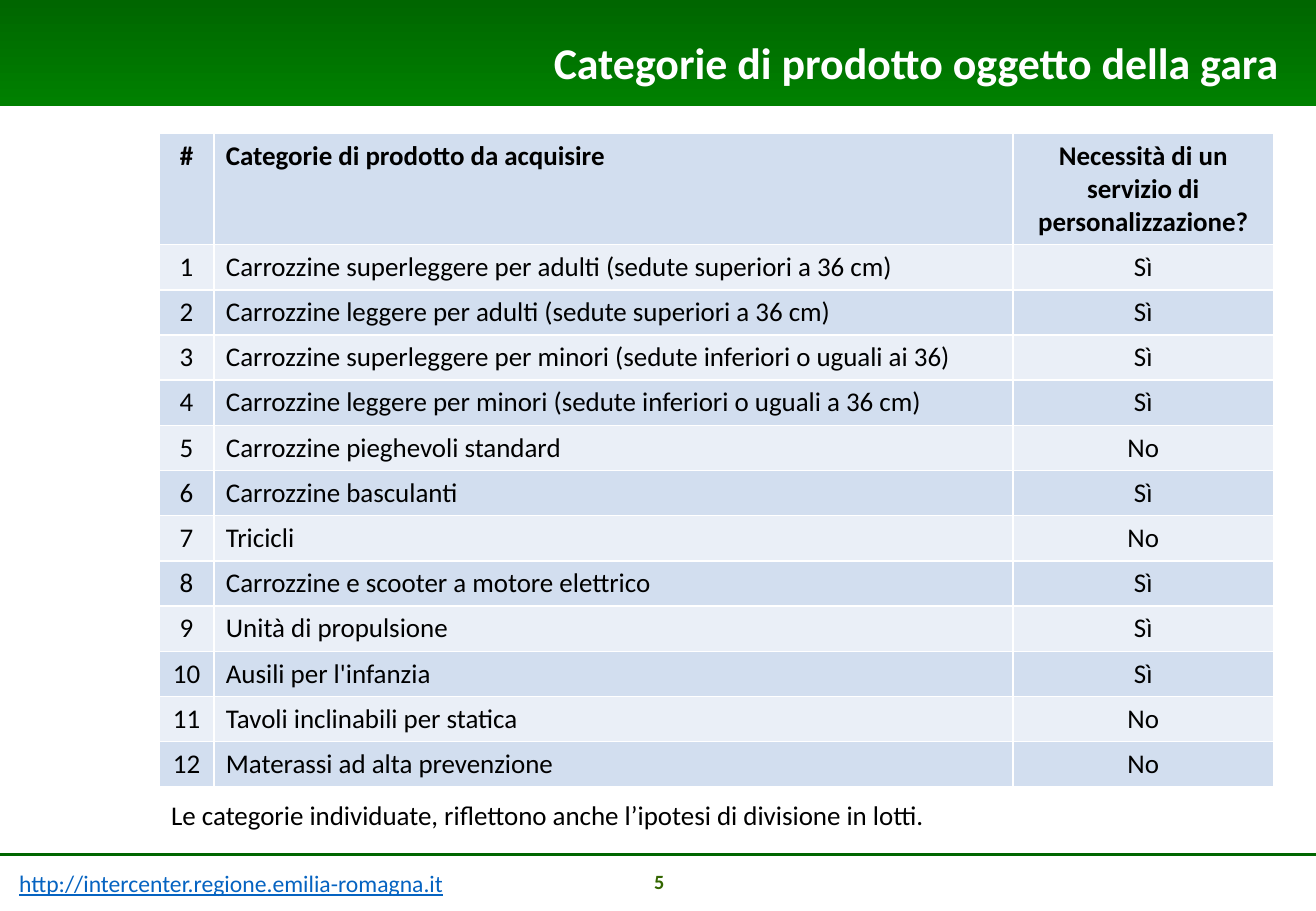
"""Build the slide that lists the product categories of the tender."""
import dataclasses
import typing

import pptx
import pptx.dml.color
import pptx.enum.shapes
import pptx.enum.text
import pptx.oxml.ns
import pptx.util
from lxml import etree

Cm = pptx.util.Cm
Align = pptx.enum.text.PP_ALIGN


@dataclasses.dataclass(frozen=True)
class Theme:
    font: str = "Calibri"
    dark: str = "006600"
    green: str = "008000"
    page: str = "336600"
    link: str = "0563C1"
    white: str = "FFFFFF"
    black: str = "000000"
    bands: tuple[str, str] = ("D2DEEF", "EAEFF7")
    head: float = 26
    body: float = 16
    url: float = 14
    small: float = 12
    rule: float = 1.75


@dataclasses.dataclass(frozen=True)
class Style:
    size: float
    color: str
    bold: bool = False
    line: bool = False
    align: Align = Align.LEFT


@dataclasses.dataclass(frozen=True)
class Label:
    text: str
    left: float
    top: float
    width: float
    height: float
    style: Style


class Item(typing.NamedTuple):
    name: str
    custom: str


THEME = Theme()
WIDTH, HEIGHT = 27.51, 19.05
COLS = (1.14, 16.71, 5.44)
HEAD_ROW, ROW = 2.28, 0.93
HEADER = ("#", "Categorie di prodotto da acquisire",
          "Necessità di un servizio di personalizzazione?")
ITEMS = (
    Item("Carrozzine superleggere per adulti (sedute superiori a 36 cm)", "Sì"),
    Item("Carrozzine leggere per adulti (sedute superiori a 36 cm)", "Sì"),
    Item("Carrozzine superleggere per minori (sedute inferiori o uguali ai 36)", "Sì"),
    Item("Carrozzine leggere per minori (sedute inferiori o uguali a 36 cm)", "Sì"),
    Item("Carrozzine pieghevoli standard", "No"),
    Item("Carrozzine basculanti", "Sì"),
    Item("Tricicli", "No"),
    Item("Carrozzine e scooter a motore elettrico", "Sì"),
    Item("Unità di propulsione", "Sì"),
    Item("Ausili per l'infanzia", "Sì"),
    Item("Tavoli inclinabili per statica", "No"),
    Item("Materassi ad alta prevenzione", "No"),
)
TITLE = Label("Categorie di prodotto oggetto della gara", 1.65, 0.61, 25.35, 1.37,
              Style(THEME.head, THEME.white, bold=True, align=Align.RIGHT))
LABELS = (
    Label("http://intercenter.regione.emilia-romagna.it", 0.15, 18.03, 12.22, 0.86,
          Style(THEME.url, THEME.link, line=True)),
    Label("5", 10.92, 18.09, 5.72, 0.69,
          Style(THEME.small, THEME.page, bold=True, align=Align.CENTER)),
    Label("Le categorie individuate, riflettono anche l’ipotesi di divisione in lotti.",
          3.33, 16.56, 23.29, 0.94, Style(THEME.body, THEME.black)),
)


def rgb(code: str) -> pptx.dml.color.RGBColor:
    return pptx.dml.color.RGBColor.from_string(code)


def write(frame, text: str, style: Style) -> None:
    frame.text = text
    for para in frame.paragraphs:
        para.alignment = style.align
        for run in para.runs:
            font = run.font
            font.name = THEME.font
            font.size = pptx.util.Pt(style.size)
            font.bold = style.bold
            font.underline = style.line
            font.color.rgb = rgb(style.color)


def place(shape, label: Label) -> None:
    shape.left, shape.top = Cm(label.left), Cm(label.top)
    shape.width, shape.height = Cm(label.width), Cm(label.height)
    frame = shape.text_frame
    frame.word_wrap = True
    frame.auto_size = pptx.enum.text.MSO_AUTO_SIZE.NONE
    frame.vertical_anchor = pptx.enum.text.MSO_ANCHOR.MIDDLE
    write(frame, label.text, label.style)


def add_banner(slide) -> None:
    bar = slide.shapes.add_shape(pptx.enum.shapes.MSO_SHAPE.RECTANGLE,
                                 0, 0, Cm(WIDTH), Cm(2.21))
    bar.shadow.inherit = False
    bar.line.fill.background()
    bar.fill.gradient()
    bar.fill.gradient_angle = 270
    for stop, code in zip(bar.fill.gradient_stops, (THEME.dark, THEME.green)):
        stop.color.rgb = rgb(code)
    title = slide.shapes.title
    bar.element.addnext(title.element)
    place(title, TITLE)


def add_rule(slide) -> None:
    rule = slide.shapes.add_connector(pptx.enum.shapes.MSO_CONNECTOR.STRAIGHT,
                                      0, Cm(17.86), Cm(WIDTH), Cm(17.86))
    rule.line.color.rgb = rgb(THEME.dark)
    rule.line.width = pptx.util.Pt(THEME.rule)
    etree.SubElement(rule.element.spPr, pptx.oxml.ns.qn("a:effectLst"))


def add_grid(slide) -> None:
    rows = [HEADER] + [(str(num), *item) for num, item in enumerate(ITEMS, 1)]
    height = HEAD_ROW + ROW * len(ITEMS)
    table = slide.shapes.add_table(len(rows), len(COLS), Cm(3.33), Cm(2.79),
                                   Cm(sum(COLS)), Cm(height)).table
    table.first_row = table.horz_banding = False
    for col, width in zip(table.columns, COLS):
        col.width = Cm(width)
    for r, texts in enumerate(rows):
        table.rows[r].height = Cm(ROW if r else HEAD_ROW)
        for c, text in enumerate(texts):
            cell = table.cell(r, c)
            cell.fill.solid()
            cell.fill.fore_color.rgb = rgb(THEME.bands[r % 2])
            align = Align.LEFT if c == 1 else Align.CENTER
            write(cell.text_frame, text,
                  Style(THEME.body, THEME.black, bold=r == 0, align=align))


def main() -> None:
    deck = pptx.Presentation()
    deck.slide_width, deck.slide_height = Cm(WIDTH), Cm(HEIGHT)
    slide = deck.slides.add_slide(deck.slide_layouts.get_by_name("Title Only"))
    add_banner(slide)
    add_rule(slide)
    add_grid(slide)
    for label in LABELS:
        place(slide.shapes.add_textbox(0, 0, 0, 0), label)
    deck.save("out.pptx")


if __name__ == "__main__":
    main()
